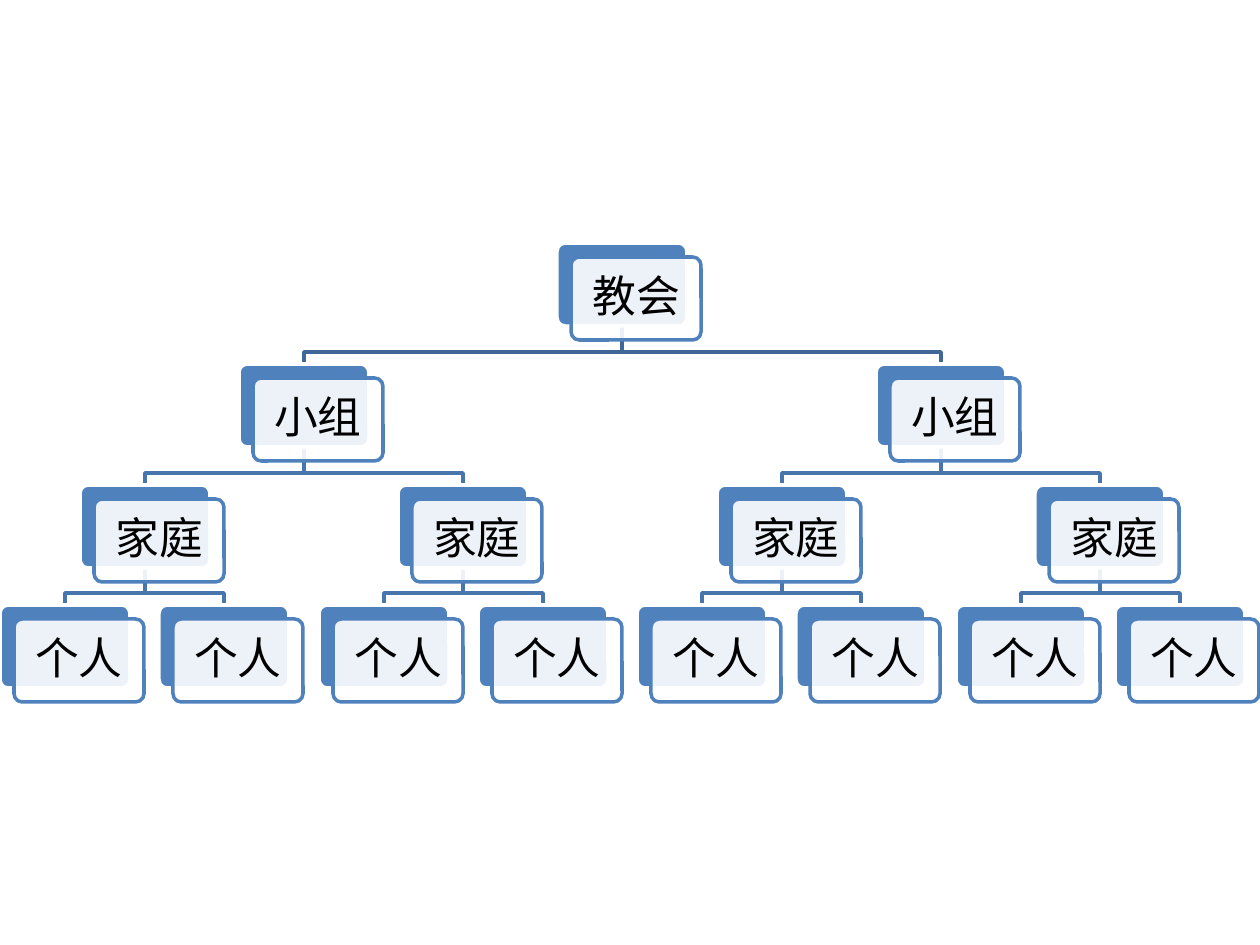
from dataclasses import dataclass

from lxml.etree import SubElement
from pptx import Presentation
from pptx.dml.color import RGBColor
from pptx.enum.shapes import MSO_SHAPE as Preset
from pptx.enum.text import MSO_ANCHOR as Anchor, PP_ALIGN as Align
from pptx.oxml.ns import qn
from pptx.shapes.autoshape import Shape
from pptx.shapes.shapetree import SlideShapes
from pptx.util import Emu, Pt

BLUE = RGBColor(0x4F, 0x81, 0xBD)
UPPER_LINK = RGBColor(0x3F, 0x67, 0x97)
LOWER_LINK = RGBColor(0x48, 0x75, 0xAC)
WHITE = RGBColor(0xFF, 0xFF, 0xFF)
BLACK = RGBColor(0x00, 0x00, 0x00)

EMU_PER_PX = 914400 / 126
SLIDE_WIDTH, SLIDE_HEIGHT = 1260, 945
CARD_WIDTH, CARD_HEIGHT = 130, 83
CARD_OFFSET = 14
ELBOW_GAP = 12
INSET = 13
LEVEL_TOPS = (243, 364, 485, 605)
LEVEL_LABELS = ("教会", "小组", "家庭", "个人")
FIRST_CENTRE, LAST_CENTRE = 65, 1180


@dataclass(frozen=True)
class Unit:
    """One unit of the church, placed by its level and its rank in that level."""

    level: int
    rank: int

    @property
    def label(self) -> str:
        return LEVEL_LABELS[self.level]

    @property
    def top(self) -> int:
        return LEVEL_TOPS[self.level]

    @property
    def centre(self) -> int:
        leaves = 2 ** (len(LEVEL_TOPS) - 1)
        position = (self.rank + 0.5) * leaves / 2**self.level - 0.5
        return round(FIRST_CENTRE + (LAST_CENTRE - FIRST_CENTRE) * position / (leaves - 1))

    @property
    def parent(self) -> "Unit":
        return Unit(self.level - 1, self.rank // 2)


def px(length: int) -> Emu:
    """Turn pixels into EMU."""
    return Emu(round(length * EMU_PER_PX))


def write_text(shape: Shape, text: str, *, size: int, font: str, color: RGBColor) -> None:
    """Write centred text into a shape."""
    frame = shape.text_frame
    frame.word_wrap = True
    frame.vertical_anchor = Anchor.MIDDLE
    frame.margin_left = frame.margin_right = px(INSET)
    frame.margin_top = frame.margin_bottom = px(INSET)
    paragraph = frame.paragraphs[0]
    paragraph.alignment = Align.CENTER
    paragraph.line_spacing = 0.9
    run = paragraph.add_run()
    run.text = text
    run.font.size = Pt(size)
    run.font.name = font
    run.font.color.rgb = color


def draw_card(shapes: SlideShapes, left: int, top: int, fill: RGBColor, line: RGBColor) -> Shape:
    """Draw one rounded card."""
    card = shapes.add_shape(
        Preset.ROUNDED_RECTANGLE, px(left), px(top), px(CARD_WIDTH), px(CARD_HEIGHT)
    )
    card.adjustments[0] = 0.1
    card.shadow.inherit = False
    card.fill.solid()
    card.fill.fore_color.rgb = fill
    card.line.color.rgb = line
    card.line.width = Pt(2)
    return card


def draw_unit(shapes: SlideShapes, unit: Unit) -> None:
    """Draw a blue card with a translucent labelled card in front of it."""
    left = unit.centre - CARD_WIDTH // 2
    draw_card(shapes, left, unit.top, BLUE, WHITE)
    front = draw_card(shapes, left + CARD_OFFSET, unit.top + CARD_OFFSET, WHITE, BLUE)
    white = front.fill._xPr.find(qn("a:solidFill")).find(qn("a:srgbClr"))
    SubElement(white, qn("a:alpha"), val="90000")
    write_text(front, unit.label, size=25, font="Calibri", color=BLACK)


def draw_link(shapes: SlideShapes, unit: Unit) -> None:
    """Draw the elbow line from a unit's parent down to the unit."""
    parent = unit.parent
    elbow = unit.top - ELBOW_GAP
    builder = shapes.build_freeform(px(parent.centre), px(parent.top + CARD_HEIGHT))
    turns = ((parent.centre, elbow), (unit.centre, elbow), (unit.centre, unit.top))
    builder.add_line_segments([(px(x), px(y)) for x, y in turns], close=False)
    link = builder.convert_to_shape()
    link.shadow.inherit = False
    link.fill.background()
    link.line.color.rgb = UPPER_LINK if unit.level == 1 else LOWER_LINK
    link.line.width = Pt(2)


def main() -> None:
    """Build the church structure slide."""
    deck = Presentation()
    deck.slide_width, deck.slide_height = px(SLIDE_WIDTH), px(SLIDE_HEIGHT)
    shapes = deck.slides.add_slide(deck.slide_layouts[6]).shapes
    units = [Unit(level, rank) for level in range(len(LEVEL_TOPS)) for rank in range(2**level)]
    for unit in units[1:]:
        draw_link(shapes, unit)
    for unit in units:
        draw_unit(shapes, unit)
    deck.save("out.pptx")


if __name__ == "__main__":
    main()
